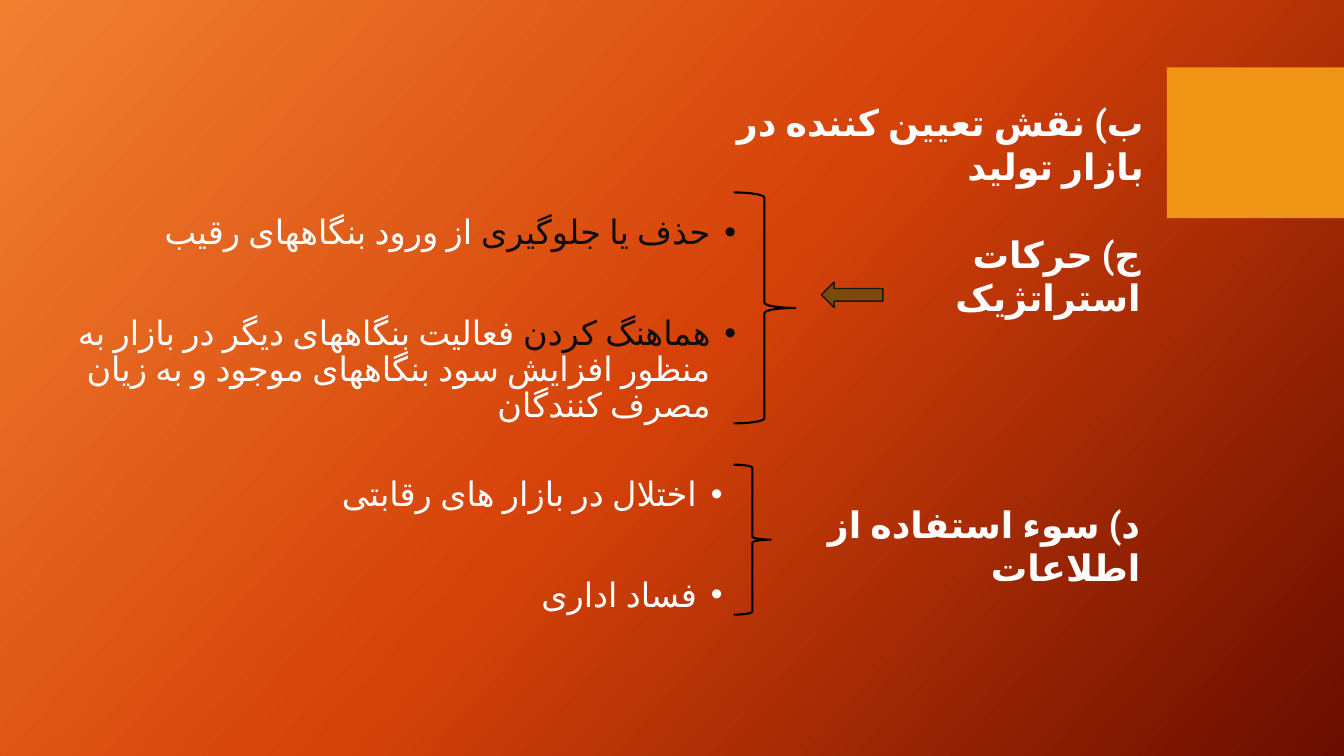
from copy import deepcopy
from lxml.etree import SubElement
from pptx import Presentation
from pptx.dml.color import RGBColor
from pptx.enum.lang import MSO_LANGUAGE_ID
from pptx.enum.shapes import MSO_SHAPE
from pptx.enum.text import MSO_AUTO_SIZE, PP_ALIGN
from pptx.oxml.ns import qn
from pptx.util import Cm, Pt

FONT = "Roboto"
WHITE = RGBColor(0xFF, 0xFF, 0xFF)
BLACK = RGBColor(0x00, 0x00, 0x00)
DARK = RGBColor(0x0D, 0x0D, 0x0D)
ORANGE = RGBColor(0xF0, 0x94, 0x15)
BROWN = RGBColor(0x7B, 0x4A, 0x08)
ARROW_EDGE = RGBColor(0x18, 0x17, 0x17)
BACKGROUND = (
    (0, RGBColor(0xF1, 0x80, 0x31)),
    (0.5, RGBColor(0xD5, 0x42, 0x09)),
    (1, RGBColor(0x6A, 0x0D, 0x00)),
)


def paint_background(s):
    """Fill the slide with the three-stop diagonal gradient."""
    fill = s.background.fill
    fill.gradient()
    fill.gradient_angle = 318
    stops = next(s.element.iter(qn("a:gsLst")))
    stops.append(deepcopy(stops[0]))
    for stop, (position, color) in zip(fill.gradient_stops, BACKGROUND):
        stop.position = position
        stop.color.rgb = color


def add_figure(s, kind, left, top, width, height, fill=None, line=None, weight=1):
    """Add a preset shape with optional fill and outline."""
    sp = s.shapes.add_shape(kind, Cm(left), Cm(top), Cm(width), Cm(height))
    sp.shadow.inherit = False
    if fill is None:
        sp.fill.background()
    else:
        sp.fill.solid()
        sp.fill.fore_color.rgb = fill
    if line is None:
        sp.line.fill.background()
    else:
        sp.line.color.rgb = line
        sp.line.width = Pt(weight)


def add_box(s, left, top, width, height):
    """Add a wrapping text box and return its text frame."""
    tf = s.shapes.add_textbox(Cm(left), Cm(top), Cm(width), Cm(height)).text_frame
    tf.word_wrap = True
    return tf


def set_rtl(p):
    """Make a paragraph right-to-left and right-aligned."""
    p.alignment = PP_ALIGN.RIGHT
    pPr = p._p.get_or_add_pPr()
    pPr.set("rtl", "1")
    return pPr


def style_run(r, size, color, bold=False):
    """Set the language and the Latin and complex-script font of a run."""
    r.font.size = Pt(size)
    r.font.bold = bold
    r.font.color.rgb = color
    r.font.name = FONT
    r.font.language_id = MSO_LANGUAGE_ID.FARSI
    SubElement(r.font._element, qn("a:cs"), typeface=FONT)


def add_heading(s, text, left, top, width):
    """Add a bold heading in a box that grows with its text."""
    tf = add_box(s, left, top, width, 1.37)
    tf.auto_size = MSO_AUTO_SIZE.SHAPE_TO_FIT_TEXT
    tf.text = text
    p = tf.paragraphs[0]
    set_rtl(p)
    style_run(p.runs[0], 26, WHITE, bold=True)


def add_bullets(s, items, left, top, width, height):
    """Add widely spaced bullets, each a list of (text, color) parts."""
    tf = add_box(s, left, top, width, height)
    for i, parts in enumerate(items):
        p = tf.add_paragraph() if i else tf.paragraphs[0]
        pPr = set_rtl(p)
        pPr.set("marL", str(Cm(0.64)))
        pPr.set("indent", str(Cm(-0.64)))
        SubElement(pPr, qn("a:buFont"), typeface="Arial")
        SubElement(pPr, qn("a:buChar"), char="•")
        p.line_spacing = 0.9
        p.space_before = Pt(46 if i else 0)
        for text, color in parts:
            r = p.add_run()
            r.text = text
            style_run(r, 24, color)


def main():
    """Build the slide and save it."""
    prs = Presentation()
    prs.slide_width, prs.slide_height = Cm(33.87), Cm(19.05)
    s = prs.slides.add_slide(prs.slide_layouts[6])
    paint_background(s)
    add_figure(s, MSO_SHAPE.RECTANGLE, 29.41, 1.7, 4.46, 3.8, fill=ORANGE)

    add_heading(s, "ب) نقش تعیین کننده در بازار تولید", 17.55, 2.41, 11.53)
    add_heading(s, "ج) حرکات استراتژیک", 21.46, 5.72, 7.54)
    add_heading(s, "د) سوء استفاده از اطلاعات", 20.02, 12.52, 8.97)

    add_bullets(s, [
        [("حذف یا جلوگیری ", DARK), ("از ورود بنگاههای رقیب", WHITE)],
        [("هماهنگ کردن ", DARK),
         ("فعالیت بنگاههای دیگر در بازار به منظور افزایش سود بنگاههای موجود "
          "و به زیان مصرف کنندگان", WHITE)],
    ], 0, 5.31, 18.8, 5.82)
    add_bullets(s, [
        [("اختلال در بازار های رقابتی", WHITE)],
        [("فساد اداری", WHITE)],
    ], 2.46, 11.91, 16, 3.78)

    add_figure(s, MSO_SHAPE.RIGHT_BRACE, 18.49, 4.85, 1.55, 5.82, line=BLACK, weight=1.5)
    add_figure(s, MSO_SHAPE.RIGHT_BRACE, 18.49, 11.71, 0.94, 3.78, line=BLACK, weight=1.5)
    add_figure(s, MSO_SHAPE.LEFT_ARROW, 20.7, 7.11, 1.55, 0.64, fill=BROWN, line=ARROW_EDGE)
    prs.save("out.pptx")


if __name__ == "__main__":
    main()
